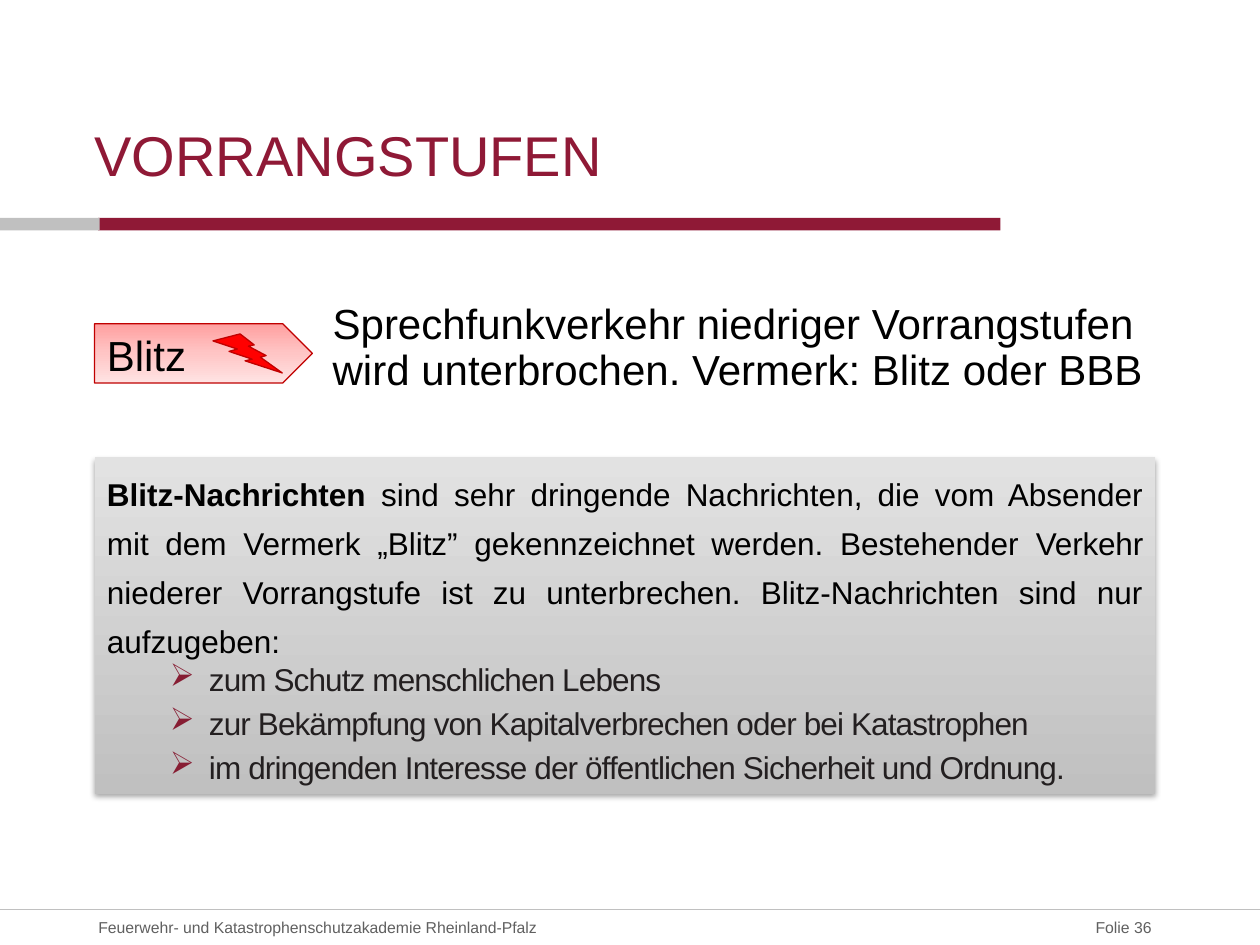
from dataclasses import dataclass
from typing import Optional, Sequence

from lxml.etree import SubElement
from pptx import Presentation
from pptx.dml.color import RGBColor
from pptx.enum.shapes import MSO_CONNECTOR, MSO_SHAPE as Preset
from pptx.enum.text import MSO_ANCHOR as Anchor, MSO_AUTO_SIZE as AutoSize, PP_ALIGN as Align
from pptx.oxml import parse_xml
from pptx.oxml.ns import nsdecls, qn
from pptx.util import Inches, Pt

WINE = RGBColor(0x8F, 0x19, 0x36)
BULLET = RGBColor(0x87, 0x1D, 0x33)
SILVER = RGBColor(0xC0, 0xC0, 0xC0)
LIGHT = RGBColor(0xE2, 0xE2, 0xE2)
FOOTER = RGBColor(0x60, 0x60, 0x60)
BLACK = RGBColor(0, 0, 0)
INK = RGBColor(0x23, 0x1F, 0x20)
RED = RGBColor(0xFF, 0, 0)
DARK_RED = RGBColor(0xC0, 0, 0)
BLUSH = (RGBColor(0xFF, 0xA0, 0xA0), RGBColor(0xFF, 0xC5, 0xC5), RGBColor(0xFF, 0xE3, 0xE3))


@dataclass(frozen=True)
class Box:
    left: float
    top: float
    width: float
    height: float

    def lengths(self) -> list:
        return [Inches(v) for v in (self.left, self.top, self.width, self.height)]


@dataclass(frozen=True)
class Piece:
    text: str
    bold: bool = False
    spacing: float = 0


def add_bullet(paragraph) -> None:
    """Give a paragraph the arrow bullet, its hanging indent and its tab stop."""
    props = paragraph._p.get_or_add_pPr()
    props.set("lvl", "1")
    props.set("marL", str(Inches(0.81)))
    props.set("indent", str(Inches(-0.31)))
    color = SubElement(props, qn("a:buClr"))
    SubElement(color, qn("a:srgbClr"), val=str(BULLET))
    SubElement(props, qn("a:buChar"), char="➢")
    tabs = SubElement(props, qn("a:tabLst"))
    SubElement(tabs, qn("a:tab"), pos=str(Inches(1)), algn="l")


def write(paragraph, *pieces: Piece, size: float, color: RGBColor, align: Align = Align.LEFT,
          line_spacing: Optional[float] = None, before: float = 0, bullet: bool = False) -> None:
    """Write formatted pieces of text into a paragraph."""
    if bullet:
        add_bullet(paragraph)
    paragraph.alignment = align
    paragraph.space_before = Pt(before)
    if line_spacing:
        paragraph.line_spacing = line_spacing
    for piece in pieces:
        run = paragraph.add_run()
        run.text = piece.text
        run.font.name = "Arial"
        run.font.size = Pt(size)
        run.font.bold = piece.bold
        run.font.color.rgb = color
        if piece.spacing:
            run._r.get_or_add_rPr().set("spc", str(round(piece.spacing * 100)))


def add_text(slide, box: Box, text: str, anchor: Anchor = Anchor.TOP,
             right_inset: float = 0, **text_format) -> None:
    """Add a wrapped text box with a single paragraph."""
    frame = slide.shapes.add_textbox(*box.lengths()).text_frame
    frame.word_wrap = True
    frame.vertical_anchor = anchor
    frame.margin_left = frame.margin_top = frame.margin_bottom = 0
    frame.margin_right = Inches(right_inset)
    write(frame.paragraphs[0], Piece(text), **text_format)


def add_preset(slide, preset: Preset, box: Box, colors: Sequence[RGBColor],
               outline: Optional[RGBColor] = None):
    """Add a preset shape with a solid fill or a gradient from top to bottom."""
    shape = slide.shapes.add_shape(preset, *box.lengths())
    shape.shadow.inherit = False
    if len(colors) == 1:
        shape.fill.solid()
        shape.fill.fore_color.rgb = colors[0]
    else:
        shape.fill.gradient()
        shape.fill.gradient_angle = 270
        stops = shape._element.spPr.find(qn("a:gradFill")).find(qn("a:gsLst"))
        for stop in list(stops):
            stops.remove(stop)
        for index, color in enumerate(colors):
            stop = SubElement(stops, qn("a:gs"), pos=str(100000 * index // (len(colors) - 1)))
            SubElement(stop, qn("a:srgbClr"), val=str(color))
    if outline is None:
        shape.line.fill.background()
    else:
        shape.line.color.rgb = outline
        shape.line.width = Pt(0.75)
    shape.text_frame.word_wrap = True
    shape.text_frame.vertical_anchor = Anchor.TOP
    return shape


def add_shadow(shape) -> None:
    """Cast a soft shadow below a shape."""
    shape._element.spPr.find(qn("a:effectLst")).append(parse_xml(
        f'<a:outerShdw {nsdecls("a")} blurRad="{Pt(3.1)}" dist="{Pt(1.8)}" dir="5400000" '
        'rotWithShape="0"><a:srgbClr val="000000"><a:alpha val="35000"/></a:srgbClr></a:outerShdw>'))


def add_footer(slide) -> None:
    """Add the footer rule, the academy name and the slide number."""
    top = 7.22
    rule = slide.shapes.add_connector(
        MSO_CONNECTOR.STRAIGHT, 0, Inches(top), Inches(10), Inches(top))
    rule.line.color.rgb = SILVER
    rule.line.width = Pt(0.75)
    SubElement(rule._element.spPr, qn("a:effectLst"))
    add_text(slide, Box(7.94, top, 1.27, 0.28), "Folie 36", Anchor.MIDDLE, right_inset=0.07,
             size=9, color=FOOTER, align=Align.RIGHT)
    add_text(slide, Box(0.78, top, 5.51, 0.28),
             "Feuerwehr- und Katastrophenschutzakademie Rheinland-Pfalz", Anchor.MIDDLE,
             size=9, color=FOOTER)


def add_explanation(slide) -> None:
    """Add the grey panel that explains the flash messages."""
    panel = add_preset(slide, Preset.RECTANGLE, Box(0.75, 3.63, 8.42, 2.67), (LIGHT, SILVER))
    add_shadow(panel)
    frame = panel.text_frame
    frame.auto_size = AutoSize.SHAPE_TO_FIT_TEXT
    write(frame.paragraphs[0],
          Piece("Blitz-Nachrichten ", bold=True),
          Piece("sind sehr dringende Nachrichten, die vom Absender mit dem Vermerk „Blitz” "
                "gekennzeichnet werden. Bestehender "),
          Piece("Verkehr ", spacing=-0.1),
          Piece("niederer Vorrangstufe ist zu unterbrechen. Blitz-Nachrichten sind nur "
                "aufzugeben:"),
          size=18, color=BLACK, align=Align.JUSTIFY, line_spacing=1.3)
    reasons = ("zum Schutz menschlichen Lebens",
               "zur Bekämpfung von Kapitalverbrechen oder bei Katastrophen",
               "im dringenden Interesse der öffentlichen Sicherheit und Ordnung.")
    for index, reason in enumerate(reasons):
        write(frame.add_paragraph(), Piece(reason, spacing=-0.5), size=18, color=INK,
              before=3.5 if index else 0, bullet=True)


def main() -> None:
    """Build the slide on the flash priority level."""
    deck = Presentation()
    deck.slide_width, deck.slide_height = Inches(10), Inches(7.5)
    slide = deck.slides.add_slide(deck.slide_layouts[6])
    add_preset(slide, Preset.RECTANGLE, Box(0.78, 1.73, 7.16, 0.1), (WINE,))
    add_preset(slide, Preset.RECTANGLE, Box(0, 1.73, 0.79, 0.1), (SILVER,))
    add_footer(slide)
    add_text(slide, Box(0.75, 0.48, 6.39, 1.01), "VORRANGSTUFEN", Anchor.BOTTOM,
             size=32, color=WINE)
    add_text(slide, Box(2.64, 2.41, 6.69, 1.18),
             "Sprechfunkverkehr niedriger Vorrangstufen wird unterbrochen. "
             "Vermerk: Blitz oder BBB", size=24, color=BLACK, line_spacing=0.9)
    flash = add_preset(slide, Preset.PENTAGON, Box(0.75, 2.57, 1.73, 0.47), BLUSH, DARK_RED)
    write(flash.text_frame.paragraphs[0], Piece("Blitz"), size=24, color=BLACK)
    add_preset(slide, Preset.LIGHTNING_BOLT, Box(1.69, 2.65, 0.55, 0.31), (RED,), DARK_RED)
    add_explanation(slide)
    deck.save("out.pptx")


if __name__ == "__main__":
    main()
